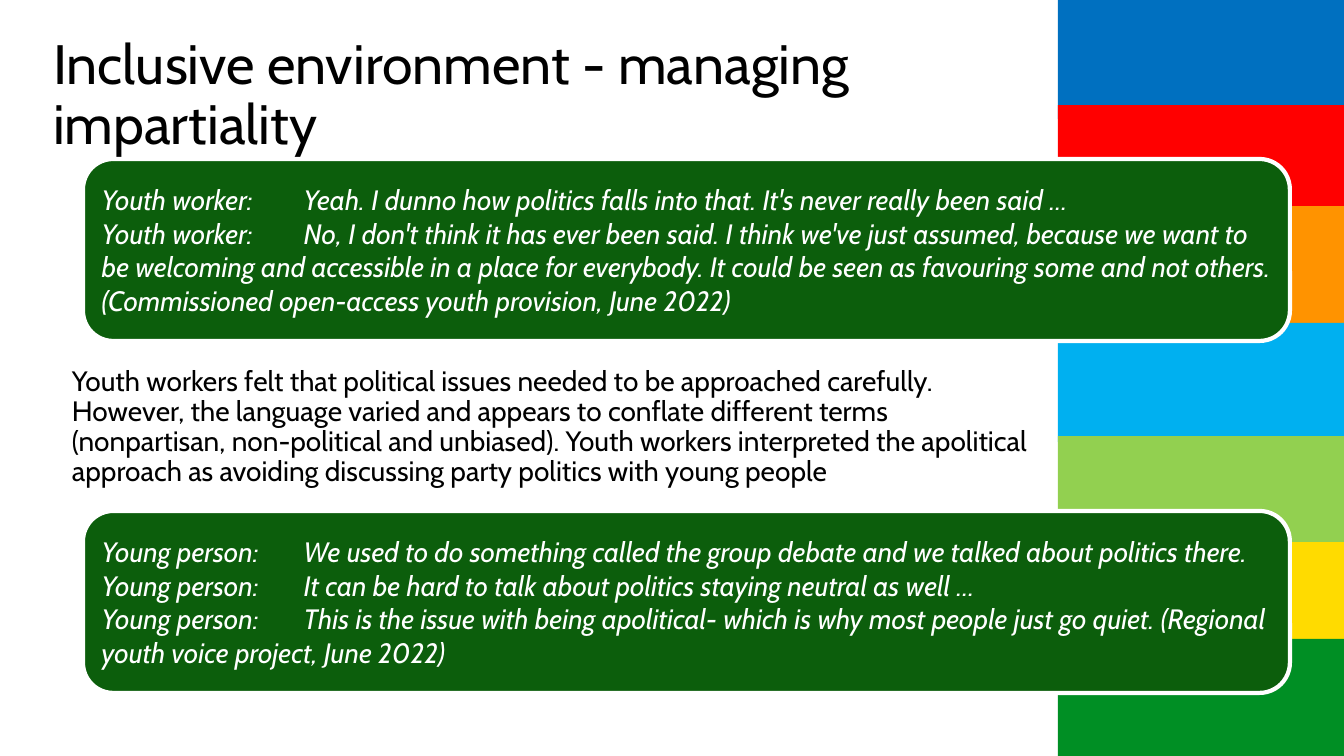
from lxml import etree
from pptx import Presentation
from pptx import util as u
from pptx.dml.color import RGBColor
from pptx.enum import shapes, text
from pptx.oxml import ns

COLOURS = {
    "black": "000000", "white": "FFFFFF", "card": "0C5E0C",
    "blue": "0070C0", "red": "FF0000", "orange": "FF9300", "sky": "00B0F0",
    "lime": "92D050", "yellow": "FFDB00", "green": "008F24",
}
STRIPES = [("blue", 0), ("red", 105), ("orange", 206), ("sky", 323),
           ("lime", 436), ("yellow", 542), ("green", 639)]
TITLE = "Inclusive environment - managing impartiality"
FINDING = (
    "Youth workers felt that political issues needed to be approached carefully. "
    "However, the language varied and appears to conflate different terms "
    "(nonpartisan, non-political and unbiased). Youth workers interpreted the "
    "apolitical approach as avoiding discussing party politics with young people"
)
WORKER_QUOTES = [
    "Youth worker: \tYeah. I dunno how politics falls into that. "
    "It's never really been said …",
    "Youth worker: \tNo, I don't think it has ever been said. I think we've just "
    "assumed, because we want to be welcoming and accessible in a place for "
    "everybody. It could be seen as favouring some and not others. "
    "(Commissioned open-access youth provision, June 2022)",
]
YOUNG_QUOTES = [
    "Young person:\tWe used to do something called the group debate and we talked "
    "about politics there.",
    "Young person:\tIt can be hard to talk about politics staying neutral as well …",
    "Young person:\tThis is the issue with being apolitical- which is why most "
    "people just go quiet. (Regional youth voice project, June 2022)",
]


def px(length):
    return u.Emu(round(length * 914400 / 100.8))


def colour(name):
    return RGBColor.from_string(COLOURS[name])


class SlideBuilder:
    font = "Cabin"
    text_size = 20

    def __init__(self, slide):
        self.slide = slide

    def set_text(self, shape, paragraphs, size, ink, anchor, spacing=None,
                 italic=False, tab=None):
        frame = shape.text_frame
        frame.word_wrap = True
        frame.auto_size = text.MSO_AUTO_SIZE.NONE
        frame.vertical_anchor = anchor
        frame.text = "\n".join(paragraphs)
        for paragraph in frame.paragraphs:
            paragraph.alignment = text.PP_ALIGN.LEFT
            if spacing:
                paragraph.line_spacing = spacing
            if tab:
                properties = paragraph._p.get_or_add_pPr()
                stops = etree.SubElement(properties, ns.qn("a:tabLst"))
                etree.SubElement(stops, ns.qn("a:tab"), pos=str(px(tab)), algn="l")
            for run in paragraph.runs:
                run.font.name = self.font
                run.font.size = u.Pt(size)
                run.font.italic = italic
                run.font.color.rgb = colour(ink)

    def title(self, words, left, top, width, height):
        shape = self.slide.shapes.title
        shape.left, shape.top = px(left), px(top)
        shape.width, shape.height = px(width), px(height)
        self.set_text(shape, [words], 39.6, "black", text.MSO_ANCHOR.MIDDLE, 0.9)

    def body_text(self, words, *box):
        shape = self.slide.shapes.add_textbox(*map(px, box))
        self.set_text(shape, [words], self.text_size, "black",
                      text.MSO_ANCHOR.TOP, 0.9)

    def block(self, kind, fill, *box):
        shape = self.slide.shapes.add_shape(kind, *map(px, box))
        shape.shadow.inherit = False
        shape.fill.solid()
        shape.fill.fore_color.rgb = colour(fill)
        shape.line.fill.background()
        return shape

    def stripe(self, fill, *box):
        self.block(shapes.MSO_SHAPE.RECTANGLE, fill, *box)

    def quote_card(self, quotes, *box):
        shape = self.block(shapes.MSO_SHAPE.ROUNDED_RECTANGLE, "card", *box)
        shape.line.color.rgb = colour("white")
        shape.line.width = u.Pt(3)
        self.set_text(shape, quotes, self.text_size, "white",
                      text.MSO_ANCHOR.MIDDLE, italic=True, tab=202)


def main():
    presentation = Presentation()
    presentation.slide_width, presentation.slide_height = px(1344), px(756)
    title_only = presentation.slide_layouts[5]
    builder = SlideBuilder(presentation.slides.add_slide(title_only))

    builder.title(TITLE, 43, 41, 1014, 111)
    builder.body_text(FINDING, 62, 362, 996, 143)
    for name, top in STRIPES:
        builder.stripe(name, 1058, top, 286, min(119, 756 - top))
    for quotes, top in [(WORKER_QUOTES, 159), (YOUNG_QUOTES, 511)]:
        builder.quote_card(quotes, 83, top, 1207, 182)

    presentation.save("out.pptx")


if __name__ == "__main__":
    main()
